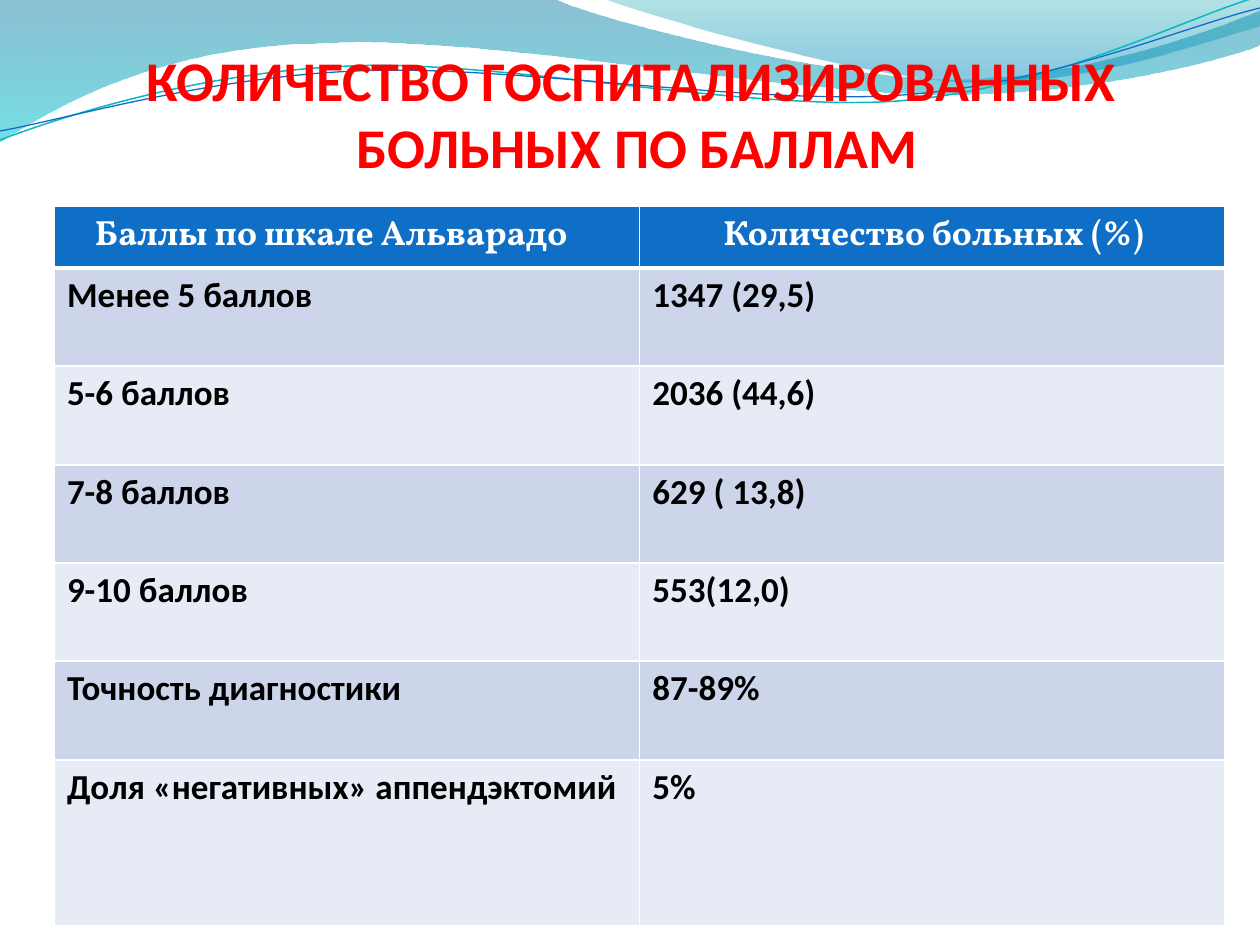
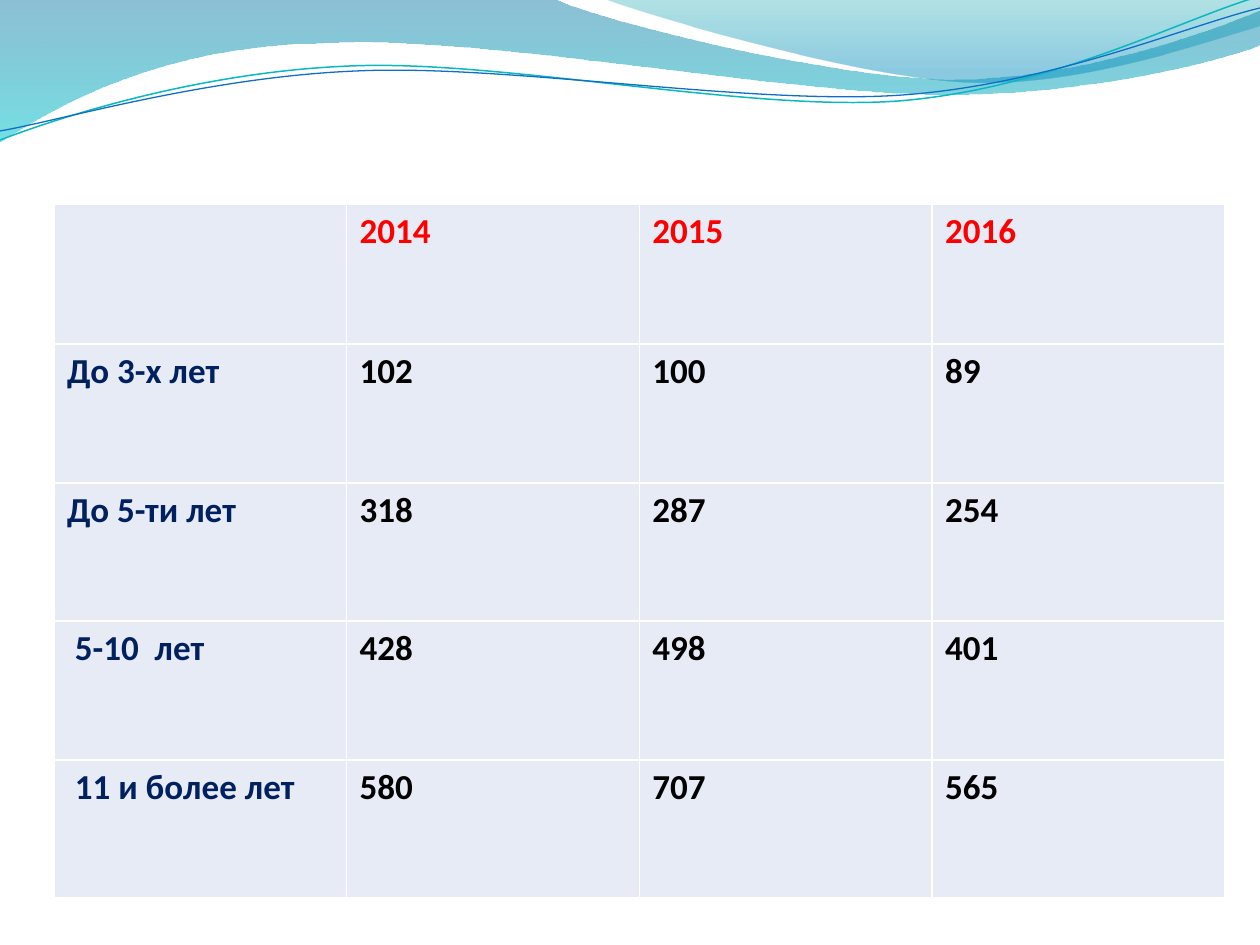
from lxml.etree import SubElement
from pptx import Presentation
from pptx.dml.color import RGBColor
from pptx.enum.text import PP_ALIGN as Align
from pptx.oxml.ns import qn
from pptx.util import Pt

PX_PER_INCH = 126
PAGE_BOX = (0, 0, 1260, 945)
WHITE, BLACK, RED, NAVY, BLUE = "FFFFFF", "000000", "FF0000", "002060", "0F6FC6"
BAND_DARK, BAND_LIGHT = "CCD5EA", "E7EBF5"
BODY_FONT, HEADER_FONT = "Calibri", "Vollkorn"
CELL_INSET = 13

WIDE_WAVE = [
    [(0, 0)],
    [(554, -1)],
    [(600, 21), (837, 79), (955, 79)],
    [(1075, 79), (1207, 33), (1260, 11)],
    [(1261, 45)],
    [(1239, 55), (1096, 96), (940, 94)],
    [(784, 94), (481, 35), (324, 43)],
    [(163, 45), (58, 105), (-1, 142)],
    [(0, 0)],
]
RIGHT_WAVE = [
    [(604, -1)],
    [(641, 14), (859, 78), (969, 82)],
    [(1079, 87), (1211, 40), (1260, 26)],
    [(1260, 0)],
    [(604, -1)],
]
TEAL_LINE = [
    [(0, 140)],
    [(60, 117), (199, 72), (349, 66)],
    [(499, 59), (747, 112), (898, 101)],
    [(1050, 89), (1182, 19), (1257, -3)],
]
BLUE_LINE = [
    [(0, 131)],
    [(59, 121), (207, 77), (357, 71)],
    [(508, 64), (752, 106), (903, 95)],
    [(1053, 84), (1186, 26), (1260, 8)],
]
SCORE_HEADERS = [("Баллы по шкале Альварадо", 28), ("Количество больных (%)", 71)]
SCORE_HEIGHTS = [62, 98, 99, 98, 98, 99, 166]
SCORE_ROWS = [
    ("Менее 5 баллов", "1347 (29,5)"),
    ("5-6 баллов", "2036 (44,6)"),
    ("7-8 баллов", "629 ( 13,8)"),
    ("9-10 баллов", "553(12,0)"),
    ("Точность диагностики", "87-89%"),
    ("Доля «негативных» аппендэктомий", "5%"),
]
AGE_HEIGHTS = [140, 139, 138, 139, 138]
AGE_ROWS = [
    ("", "2014", "2015", "2016"),
    ("До 3-х лет", "102", "100", "89"),
    ("До 5-ти лет", "318", "287", "254"),
    (" 5-10  лет", "428", "498", "401"),
    (" 11 и более лет", "580", "707", "565"),
]


def px(length):
    return round(length * 914400 / PX_PER_INCH)


def color(code):
    return RGBColor.from_string(code)


def add_span(para, text, size, ink, font=BODY_FONT):
    span = para.add_run()
    span.text = text
    span.font.size = Pt(size)
    span.font.bold = True
    span.font.name = font
    span.font.color.rgb = color(ink)


def bend_segments(shape, outline):
    segments = iter(list(shape._element.iter(qn("a:lnTo"))))
    for step in outline[1:]:
        group = [next(segments) for point in step]
        if len(group) == 3:
            curve = group[0].getparent().makeelement(qn("a:cubicBezTo"))
            group[0].addprevious(curve)
            for segment in group:
                curve.append(segment[0])
                segment.getparent().remove(segment)


def add_outline(page, box, outline, closed):
    left, top = box[:2]
    points = [(px(left + x), px(top + y)) for step in outline for x, y in step]
    builder = page.shapes.build_freeform(*points[0])
    builder.add_line_segments(points[1:], close=closed)
    shape = builder.convert_to_shape()
    bend_segments(shape, outline)
    shape.shadow.inherit = False
    return shape


def add_wave(page, box, outline, stops):
    wave = add_outline(page, box, outline, True)
    wave.line.fill.background()
    wave.fill.gradient()
    wave.fill.gradient_angle = 270
    for stop, (position, tint, opacity) in zip(wave.fill.gradient_stops, stops):
        stop.position = position
        stop.color.rgb = color(tint)
    tints = wave._element.spPr.iter(qn("a:srgbClr"))
    for tint, (position, code, opacity) in zip(tints, stops):
        SubElement(tint, qn("a:alpha"), val=str(opacity * 1000))


def add_ribbon(page, box, outline, ink, weight):
    ribbon = add_outline(page, box, outline, False)
    ribbon.fill.background()
    ribbon.line.color.rgb = color(ink)
    ribbon.line.width = Pt(weight)


def add_top_band(page, box):
    add_wave(page, box, WIDE_WAVE, [(0, "0074A1", 45), (1, "00C6CF", 55)])
    add_wave(page, box, RIGHT_WAVE, [(0, "00A1A9", 30), (0.8, "008BBF", 45)])
    add_ribbon(page, box, TEAL_LINE, "0AB8BF", 0.85)
    add_ribbon(page, box, BLUE_LINE, BLUE, 0.75)


def add_title(page, box, lines):
    frame = page.shapes.add_textbox(*map(px, box)).text_frame
    frame.word_wrap = True
    for index, line in enumerate(lines):
        para = frame.add_paragraph() if index else frame.paragraphs[0]
        para.alignment = Align.CENTER
        add_span(para, line, 32, RED)


def add_grid(page, box, columns, heights):
    frame = page.shapes.add_table(len(heights), columns, *map(px, box))
    table = frame.table
    table.first_row = table.horz_banding = False
    for column in table.columns:
        column.width = px(box[2]) // columns
    for row, height in zip(table.rows, heights):
        row.height = px(height)
    return table


def fill_cell(cell, text, ink, back, font=BODY_FONT, indent=0, bottom=1, top=1):
    properties = cell._tc.get_or_add_tcPr()
    for side, weight in (("L", 1), ("R", 1), ("T", top), ("B", bottom)):
        edge = SubElement(properties, qn(f"a:ln{side}"), w=str(Pt(weight)))
        SubElement(SubElement(edge, qn("a:solidFill")), qn("a:srgbClr"), val=WHITE)
    cell.fill.solid()
    cell.fill.fore_color.rgb = color(back)
    cell.margin_left = px(CELL_INSET + indent)
    if text:
        add_span(cell.text_frame.paragraphs[0], text, 20, ink, font)


def add_score_table(page, box):
    table = add_grid(page, box, 2, SCORE_HEIGHTS)
    for column, (text, indent) in enumerate(SCORE_HEADERS):
        fill_cell(table.cell(0, column), text, WHITE, BLUE, HEADER_FONT, indent, bottom=3)
    for row, texts in enumerate(SCORE_ROWS, 1):
        back = BAND_DARK if row % 2 else BAND_LIGHT
        for column, text in enumerate(texts):
            fill_cell(table.cell(row, column), text, BLACK, back, top=3 if row == 1 else 1)


def add_age_table(page, box):
    table = add_grid(page, box, 4, AGE_HEIGHTS)
    for row, texts in enumerate(AGE_ROWS):
        for column, text in enumerate(texts):
            ink = RED if row == 0 else NAVY if column == 0 else BLACK
            fill_cell(table.cell(row, column), text, ink, BAND_LIGHT)


def add_page(deck):
    page = deck.slides.add_slide(deck.slide_layouts[6])
    page.background.fill.solid()
    page.background.fill.fore_color.rgb = color(WHITE)
    add_top_band(page, PAGE_BOX)
    return page


def main():
    deck = Presentation()
    deck.slide_width, deck.slide_height = map(px, PAGE_BOX[2:])

    score_page = add_page(deck)
    add_score_table(score_page, (54, 206, 1171, sum(SCORE_HEIGHTS)))
    add_title(score_page, (94, 39, 1087, 149),
              ["КОЛИЧЕСТВО ГОСПИТАЛИЗИРОВАННЫХ ", "БОЛЬНЫХ ПО БАЛЛАМ"])

    age_page = add_page(deck)
    add_age_table(age_page, (54, 204, 1171, sum(AGE_HEIGHTS)))

    deck.save("out.pptx")


if __name__ == "__main__":
    main()
